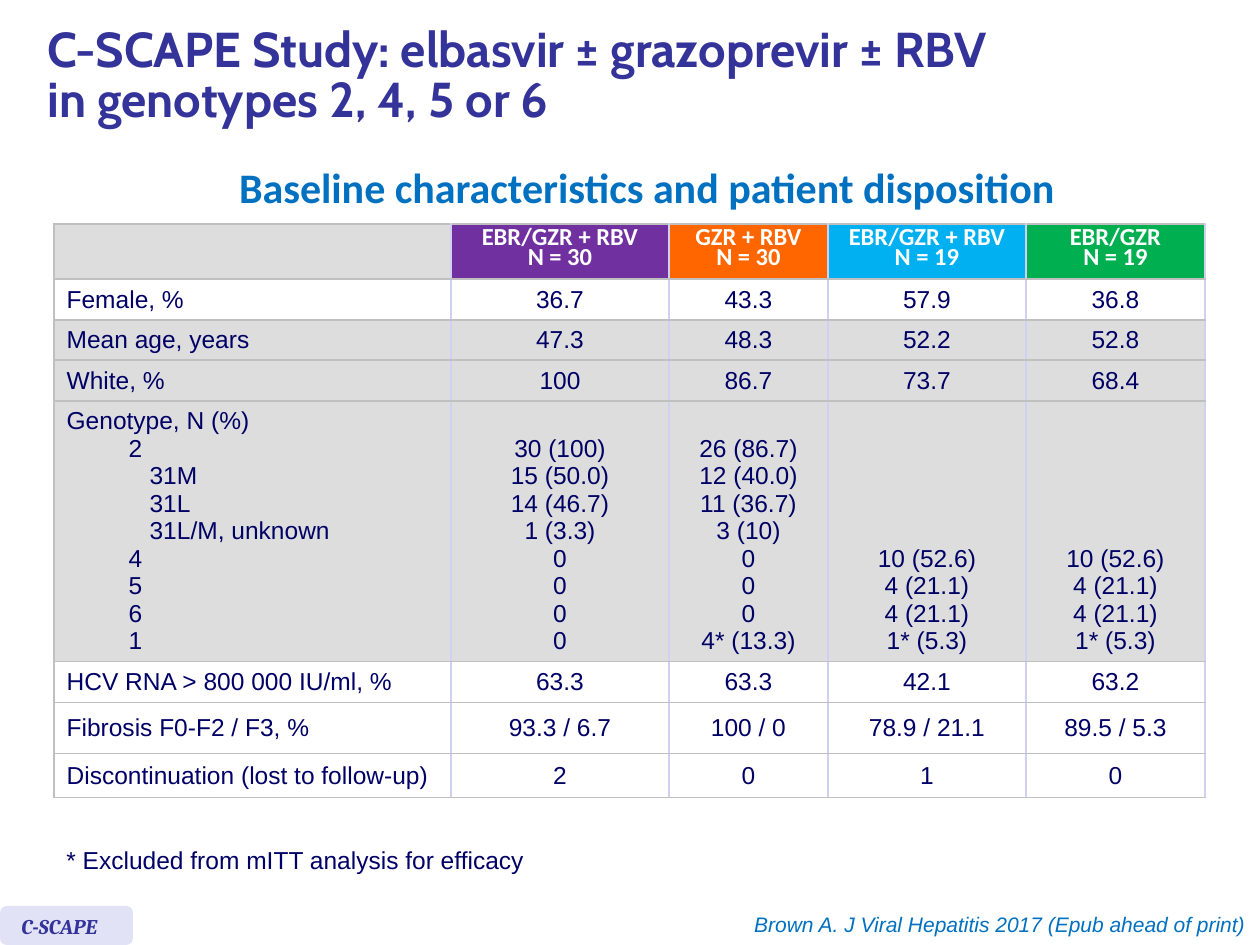
import pptx
import pptx.util
import pptx.dml.color
import pptx.enum.shapes
import pptx.enum.text
import pptx.oxml
import pptx.oxml.ns

ALIGN = pptx.enum.text.PP_ALIGN
ANCHOR = pptx.enum.text.MSO_ANCHOR
NAVY, BLUE, INDIGO = "000066", "0070C0", "333399"
GREY, WHITE, LILAC, RULE = "DDDDDD", "FFFFFF", "D0D0F0", "C0C0C0"

WIDTHS = [397, 218, 159, 198, 179]
HEADS = [
    ("EBR/GZR + RBV", "N = 30", "7030A0"),
    ("GZR + RBV", "N = 30", "FF6600"),
    ("EBR/GZR + RBV", "N = 19", "00B0F0"),
    ("EBR/GZR", "N = 19", "00B050"),
]
ROWS = [
    (41, WHITE, ["Female, %", "36.7", "43.3", "57.9", "36.8"]),
    (40, GREY, ["Mean age, years", "47.3", "48.3", "52.2", "52.8"]),
    (41, GREY, ["White, %", "100", "86.7", "73.7", "68.4"]),
    (260, GREY, [
        "Genotype, N (%)\n2\n31M\n31L\n31L/M, unknown\n4\n5\n6\n1",
        "30 (100)\n15 (50.0)\n14 (46.7)\n1 (3.3)\n0\n0\n0\n0",
        "26 (86.7)\n12 (40.0)\n11 (36.7)\n3 (10)\n0\n0\n0\n4* (13.3)",
        "10 (52.6)\n4 (21.1)\n4 (21.1)\n1* (5.3)",
        "10 (52.6)\n4 (21.1)\n4 (21.1)\n1* (5.3)",
    ]),
    (41, WHITE, ["HCV RNA > 800 000 IU/ml, %", "63.3", "63.3", "42.1", "63.2"]),
    (51, WHITE, ["Fibrosis F0-F2 / F3, %", "93.3 / 6.7", "100 / 0", "78.9 / 21.1", "89.5 / 5.3"]),
    (44, WHITE, ["Discontinuation (lost to follow-up)", "2", "0", "1", "0"]),
]


def px(n):
    return pptx.util.Emu(round(n * 914400 / 126))


def rgb(code):
    return pptx.dml.color.RGBColor.from_string(code)


def style(frame, size, face, color, bold=False, italic=False, align=ALIGN.LEFT, space=None):
    for para in frame.paragraphs:
        para.alignment = align
        if space:
            para.line_spacing = space
        font = para.font
        font.size, font.name = pptx.util.Pt(size), face
        font.bold, font.italic = bold, italic
        font.color.rgb = rgb(color)


def label(slide, box, text, size, face, color, wrap=True, **look):
    frame = slide.shapes.add_textbox(*map(px, box)).text_frame
    frame.word_wrap = wrap
    frame.text = text
    style(frame, size, face, color, **look)


def heading(slide):
    title = slide.shapes.title
    title.left, title.top, title.width, title.height = map(px, (35, 10, 1196, 135))
    frame = title.text_frame
    frame.text = "C-SCAPE Study: elbasvir ± grazoprevir ± RBV\vin genotypes 2, 4, 5 or 6"
    frame.vertical_anchor = ANCHOR.MIDDLE
    frame.auto_size = pptx.enum.text.MSO_AUTO_SIZE.NONE
    style(frame, 28, "Cabin", INDIGO, bold=True, space=0.85)


def border(cell, first):
    sides = {"lnL": RULE if first else LILAC, "lnR": LILAC, "lnT": RULE, "lnB": RULE}
    props = cell._tc.get_or_add_tcPr()
    for i, (tag, color) in enumerate(sides.items()):
        props.insert(i, pptx.oxml.parse_xml(
            f'<a:{tag} {pptx.oxml.ns.nsdecls("a")} w="12700"><a:solidFill>'
            f'<a:srgbClr val="{color}"/></a:solidFill></a:{tag}>'))


def paint(cell, text, fill, first, **look):
    cell.text = text
    cell.vertical_anchor = ANCHOR.MIDDLE
    cell.fill.solid()
    cell.fill.fore_color.rgb = rgb(fill)
    border(cell, first)
    style(cell.text_frame, 14, align=ALIGN.LEFT if first else ALIGN.CENTER, **look)


def indent(cell):
    for para in cell.text_frame.paragraphs[1:]:
        step = 83 if para.text.startswith("31") else 62
        para._p.get_or_add_pPr().set("marL", str(px(step)))


def grid(slide):
    tall = [55] + [row[0] for row in ROWS]
    box = map(px, (54, 224, sum(WIDTHS), sum(tall)))
    table = slide.shapes.add_table(len(tall), len(WIDTHS), *box).table
    for col, width in zip(table.columns, WIDTHS):
        col.width = px(width)
    for row, height in zip(table.rows, tall):
        row.height = px(height)
    paint(table.cell(0, 0), "", GREY, True, face="Arial", color=NAVY)
    for c, (arm, size, fill) in enumerate(HEADS, 1):
        paint(table.cell(0, c), f"{arm}\n{size}", fill, False, face="Calibri",
              color=WHITE, bold=True, space=pptx.util.Pt(12))
    for r, (_, fill, texts) in enumerate(ROWS, 1):
        for c, text in enumerate(texts):
            cell = table.cell(r, c)
            paint(cell, text, fill, c == 0, face="Arial", color=NAVY)
            if "\n" in text:
                cell.vertical_anchor = ANCHOR.BOTTOM
        indent(table.cell(r, 0))


def badge(slide):
    kind = pptx.enum.shapes.MSO_SHAPE.ROUNDED_RECTANGLE
    shape = slide.shapes.add_shape(kind, *map(px, (0, 906, 133, 39)))
    shape.shadow.inherit = False
    shape.fill.solid()
    shape.fill.fore_color.rgb = rgb("E2E2F6")
    shape.line.fill.background()
    label(slide, (9, 907, 145, 38), "C-SCAPE", 12, "Cambria", INDIGO, bold=True, italic=True)


def main():
    deck = pptx.Presentation()
    deck.slide_width, deck.slide_height = px(1260), px(945)
    slide = deck.slides.add_slide(deck.slide_layouts[5])
    heading(slide)
    grid(slide)
    badge(slide)
    label(slide, (54, 839, 489, 43), "* Excluded from mITT analysis for efficacy",
          14, "Arial", NAVY, wrap=False)
    label(slide, (198, 155, 898, 63), "Baseline characteristics and patient disposition",
          24, "Calibri", BLUE, bold=True, align=ALIGN.CENTER)
    label(slide, (690, 905, 568, 38), "Brown A. J Viral Hepatitis 2017 (Epub ahead of print)",
          12, "Arial", BLUE, italic=True, align=ALIGN.RIGHT)
    deck.save("out.pptx")


if __name__ == "__main__":
    main()
